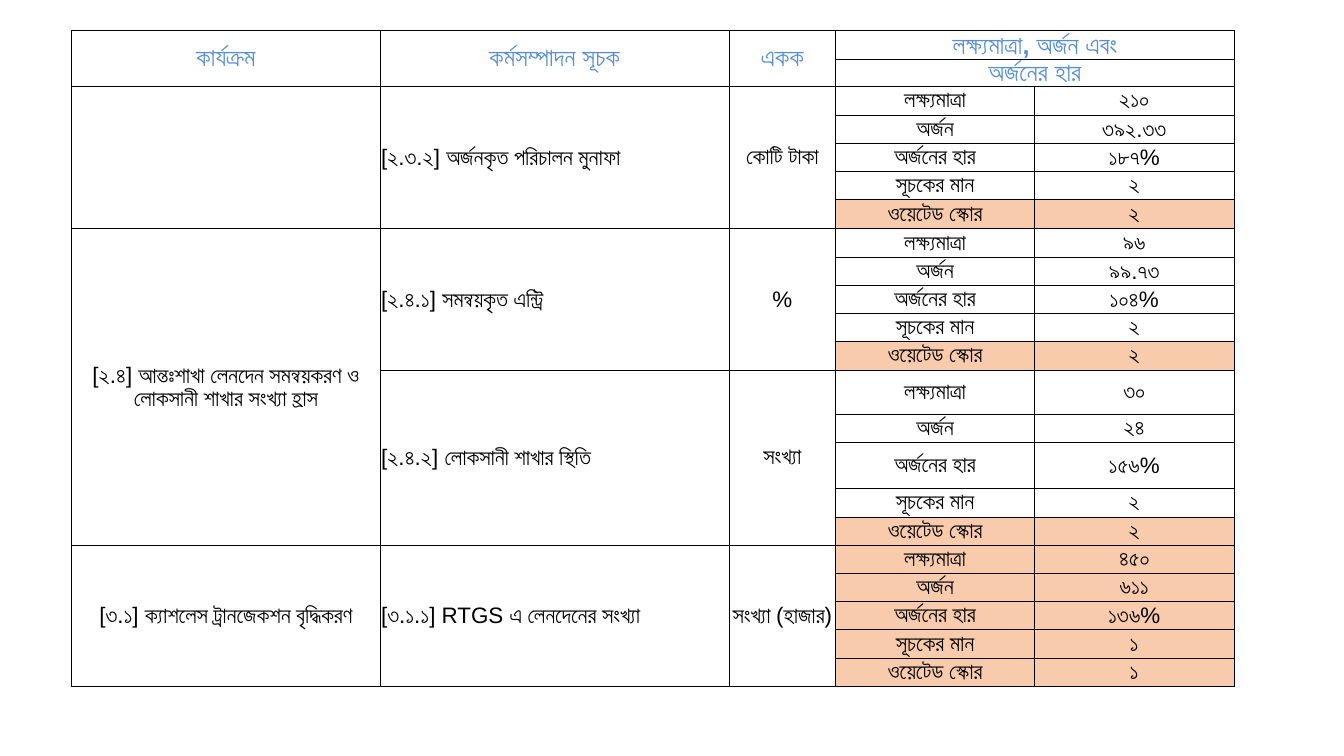
from dataclasses import dataclass

from lxml.etree import SubElement
from pptx import Presentation
from pptx.dml.color import RGBColor
from pptx.enum.text import MSO_ANCHOR, PP_ALIGN
from pptx.oxml.ns import qn
from pptx.util import Inches, Pt


@dataclass(frozen=True)
class Theme:
    font: str = "Arial"
    head_size: int = 18
    body_size: int = 16
    head: str = "558ED5"
    ink: str = "000000"
    score: str = "F8CBAC"
    thin: float = 0.5
    thick: float = 1


THEME = Theme()

COLUMNS = [3.06, 3.46, 1.06, 1.97, 1.98]
ROW, HEAD_ROW = 0.28, 0.27
TALL_ROWS = {6: 0.29, 12: 0.44, 14: 0.46}
HEADINGS = ["কার্যক্রম", "কর্মসম্পাদন সূচক", "একক"]
RESULT_HEADINGS = ["লক্ষ্যমাত্রা, অর্জন এবং", "অর্জনের হার"]
MEASURES = ["লক্ষ্যমাত্রা", "অর্জন", "অর্জনের হার", "সূচকের মান", "ওয়েটেড স্কোর"]

# Activity name, number of indicators under it
ACTIVITIES = [
    ("", 1),
    ("[২.৪] আন্তঃশাখা লেনদেন সমন্বয়করণ ও লোকসানী শাখার সংখ্যা হ্রাস", 2),
    ("[৩.১] ক্যাশলেস ট্রানজেকশন বৃদ্ধিকরণ", 1),
]

# Indicator, unit, values per measure, first highlighted measure
INDICATORS = [
    ("[২.৩.২] অর্জনকৃত পরিচালন মুনাফা", "কোটি টাকা",
     ["২১০", "৩৯২.৩৩", "১৮৭%", "২", "২"], 4),
    ("[২.৪.১] সমন্বয়কৃত এন্ট্রি", "%",
     ["৯৬", "৯৯.৭৩", "১০৪%", "২", "২"], 4),
    ("[২.৪.২] লোকসানী শাখার স্থিতি", "সংখ্যা",
     ["৩০", "২৪", "১৫৬%", "২", "২"], 4),
    ("[৩.১.১] RTGS এ লেনদেনের সংখ্যা", "সংখ্যা (হাজার)",
     ["৪৫০", "৬১১", "১৩৬%", "১", "১"], 0),
]


def set_border(cell, side, width):
    tc_pr = cell._tc.get_or_add_tcPr()
    ln = SubElement(tc_pr, qn(f"a:ln{side}"), w=str(Pt(width)))
    fill = SubElement(ln, qn("a:solidFill"))
    SubElement(fill, qn("a:srgbClr"), val=THEME.ink)


def format_cell(cell, widths):
    """Borders, insets and size for every cell, merged ones included."""
    for side in "LRTB":
        set_border(cell, side, widths.get(side, THEME.thin))
    cell.fill.background()
    layout = {"margin_left": Inches(0.01), "margin_right": Inches(0.01),
              "margin_top": Inches(0.01), "margin_bottom": 0,
              "vertical_anchor": MSO_ANCHOR.MIDDLE}
    for name, value in layout.items():
        setattr(cell, name, value)
    end = cell.text_frame.paragraphs[0]._p.get_or_add_endParaRPr()
    end.set("sz", str(THEME.body_size * 100))


def write(cell, text, align=PP_ALIGN.CENTER, heading=False):
    if not text:
        return
    p = cell.text_frame.paragraphs[0]
    p.alignment = align
    r = p.add_run()
    r.text = text
    look = {"name": THEME.font, "bold": heading,
            "size": Pt(THEME.head_size if heading else THEME.body_size)}
    for name, value in look.items():
        setattr(r.font, name, value)
    r.font.color.rgb = RGBColor.from_string(THEME.head if heading else THEME.ink)


def span(table, row, col, rows=1, cols=1):
    cell = table.cell(row, col)
    cell.merge(table.cell(row + rows - 1, col + cols - 1))
    return cell


def add_grid(s):
    n = len(MEASURES)
    heights = [HEAD_ROW] * 2 + [ROW] * (n * len(INDICATORS))
    for row, height in TALL_ROWS.items():
        heights[row] = height
    frame = s.shapes.add_table(len(heights), len(COLUMNS), Inches(0.71), Inches(0.3),
                               Inches(sum(COLUMNS)), Inches(sum(heights)))
    table = frame.table
    table.first_row = table.horz_banding = False
    for col, width in zip(table.columns, COLUMNS):
        col.width = Inches(width)
    for row, height in zip(table.rows, heights):
        row.height = Inches(height)

    # Heavier rules close the first group and the last activity
    first_end, last = 2 + n, len(heights)
    for i in range(last):
        for j in range(len(COLUMNS)):
            widths = {}
            if j < 3 and 2 <= i < first_end or j == 0 and i >= last - n:
                widths["B"] = THEME.thick
            if j < 3 and i == first_end:
                widths["T"] = THEME.thick
            format_cell(table.cell(i, j), widths)
    return table


def add_headings(table):
    for col, text in enumerate(HEADINGS):
        write(span(table, 0, col, rows=2), text, heading=True)
    for row, text in enumerate(RESULT_HEADINGS):
        write(span(table, row, 3, cols=2), text, heading=True)


def add_activities(table):
    row = 2
    for text, count in ACTIVITIES:
        rows = count * len(MEASURES)
        write(span(table, row, 0, rows=rows), text)
        row += rows


def add_indicator(table, row, name, unit, values, first_marked):
    n = len(MEASURES)
    write(span(table, row, 1, rows=n), name, PP_ALIGN.LEFT)
    write(span(table, row, 2, rows=n), unit)
    for k, pair in enumerate(zip(MEASURES, values)):
        for col, text in enumerate(pair, start=3):
            cell = table.cell(row + k, col)
            write(cell, text)
            if k >= first_marked:
                cell.fill.solid()
                cell.fill.fore_color.rgb = RGBColor.from_string(THEME.score)


def main():
    prs = Presentation()
    prs.slide_width, prs.slide_height = Inches(13.33), Inches(7.5)
    s = prs.slides.add_slide(prs.slide_layouts[6])

    table = add_grid(s)
    add_headings(table)
    add_activities(table)
    for k, indicator in enumerate(INDICATORS):
        add_indicator(table, 2 + k * len(MEASURES), *indicator)

    prs.save("out.pptx")


if __name__ == "__main__":
    main()
